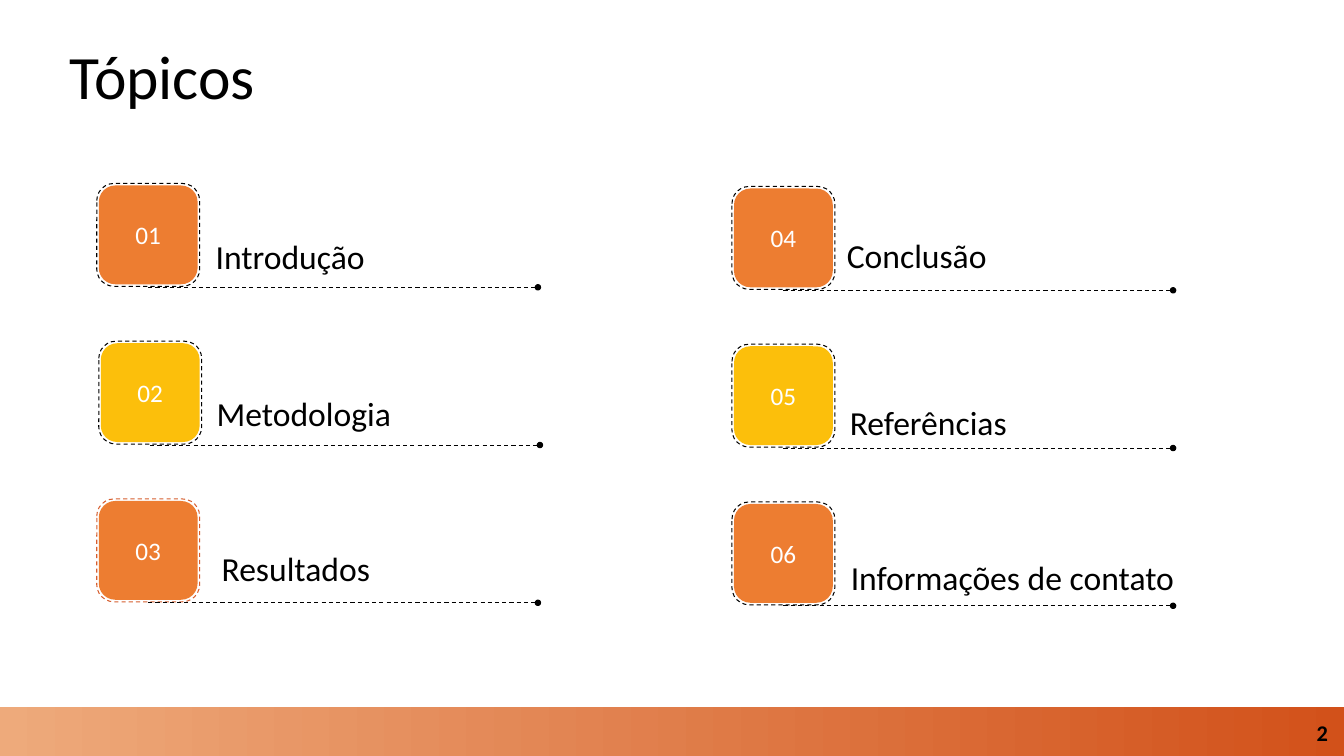
from lxml import etree
from pptx import Presentation
from pptx.dml.color import RGBColor
from pptx.enum.dml import MSO_LINE
from pptx.enum.shapes import MSO_CONNECTOR, MSO_SHAPE
from pptx.enum.text import MSO_ANCHOR, PP_ALIGN
from pptx.oxml.ns import qn
from pptx.util import Inches, Pt

RECT, ROUNDED, OVAL = MSO_SHAPE.RECTANGLE, MSO_SHAPE.ROUNDED_RECTANGLE, MSO_SHAPE.OVAL
STRAIGHT = MSO_CONNECTOR.STRAIGHT
DASH = MSO_LINE.DASH
TOP, MIDDLE = MSO_ANCHOR.TOP, MSO_ANCHOR.MIDDLE
LEFT, CENTER, RIGHT = PP_ALIGN.LEFT, PP_ALIGN.CENTER, PP_ALIGN.RIGHT

FONT = "Calibri"
BLACK, WHITE = "000000", "FFFFFF"
ORANGE, YELLOW, RUST = "ED7D31", "FCBF0B", "D75E2F"

# Topic grid, filled column by column
GRID_LEFT, GRID_TOP = 0.96, 1.82
COLUMN_PITCH, COLUMN_DROP = 6.3, 0.03
ROWS = 3
ROW_PITCH = 3.13 / 2
FRAME, TILE_INSET = 1.02, 0.02
RULE_START, RULE_END, RULE_DROP = 0.51, 4.4, 1.03
DOT = 0.05

# Label, its offset from the frame, its width, frame colour, frame shift
TOPICS = [
    ("Introdução", 1.08, 0.47, 2.33, BLACK, 0),
    ("Metodologia", 1.07, 0.46, 2.33, BLACK, 0.02),
    ("Resultados", 1.14, 0.44, 3.21, RUST, 0),
    ("Conclusão", 1.04, 0.43, 1.79, BLACK, 0),
    ("Referências", 1.07, 0.52, 3.45, BLACK, 0),
    ("Informações de contato", 1.08, 0.5, 3.53, BLACK, 0),
]


def rgb(value):
    return RGBColor.from_string(value)


def set_line(line, color, width, dash=None):
    line.color.rgb = rgb(color)
    line.width = Pt(width)
    if dash:
        line.dash_style = dash


def add_box(s, kind, left, top, width, height, fill=None):
    sp = s.shapes.add_shape(kind, Inches(left), Inches(top), Inches(width), Inches(height))
    sp.shadow.inherit = False
    sp.line.fill.background()
    if fill:
        sp.fill.solid()
        sp.fill.fore_color.rgb = rgb(fill)
    else:
        sp.fill.background()
    return sp


def write(sp, text, size, color=BLACK, align=LEFT, anchor=TOP, bold=False):
    tf = sp.text_frame
    tf.word_wrap = True
    tf.vertical_anchor = anchor
    p = tf.paragraphs[0]
    p.text = text
    p.alignment = align
    p.font.name = FONT
    p.font.size = Pt(size)
    p.font.bold = bold
    p.font.color.rgb = rgb(color)
    return p


def add_text(s, left, top, width, height, text, size, **style):
    sp = s.shapes.add_textbox(Inches(left), Inches(top), Inches(width), Inches(height))
    return write(sp, text, size, **style)


def add_footer(s, left, top, width, height):
    # Gradient band
    band = add_box(s, RECT, left, top, width, height)
    band.fill.gradient()
    band.fill.gradient_angle = 0
    for stop, color, position in zip(band.fill.gradient_stops, ("EEAA7B", "D2511A"), (0, 1)):
        stop.color.rgb = rgb(color)
        stop.position = position
    # Page number
    add_text(s, left + width - 3.06, top + 0.06, 3, 0.4, "2", 16,
             align=RIGHT, anchor=MIDDLE, bold=True)


def add_title(s, left, top, width, height):
    p = add_text(s, left, top, width, height, "Tópicos", 44, anchor=MIDDLE)
    p.line_spacing = 0.9


def add_topic(s, left, top, number, fill, label, label_dx, label_dy, label_width, frame_color):
    # Numbered tile in a dashed frame
    tile = FRAME - 2 * TILE_INSET
    add_box(s, ROUNDED, left + TILE_INSET, top + TILE_INSET, tile, tile, fill)
    frame = add_box(s, ROUNDED, left, top, FRAME, FRAME)
    set_line(frame.line, frame_color, 0.75, DASH)
    write(frame, f"{number:02d}", 18, color=WHITE, align=CENTER, anchor=MIDDLE)

    # Dashed rule ending in a dot
    y = top + RULE_DROP
    rule = s.shapes.add_connector(STRAIGHT, Inches(left + RULE_START), Inches(y),
                                  Inches(left + RULE_END), Inches(y))
    set_line(rule.line, BLACK, 0.75, DASH)
    etree.SubElement(rule._element.spPr, qn("a:effectLst"))
    dot = add_box(s, OVAL, left + RULE_END - DOT, y - DOT / 2, DOT, DOT, BLACK)
    set_line(dot.line, BLACK, 1)

    # Label
    add_text(s, left + label_dx, top + label_dy, label_width, 0.5, label, 24)


def add_topics(s, left, top):
    for i, (label, dx, dy, width, frame_color, shift) in enumerate(TOPICS):
        column, row = divmod(i, ROWS)
        add_topic(s, left + column * COLUMN_PITCH + shift,
                  top + column * COLUMN_DROP + row * ROW_PITCH,
                  i + 1, YELLOW if row == 1 else ORANGE,
                  label, dx, dy, width, frame_color)


def main():
    prs = Presentation()
    prs.slide_width, prs.slide_height = Inches(13.33), Inches(7.5)
    s = prs.slides.add_slide(prs.slide_layouts[6])
    add_footer(s, 0, 7.01, 13.33, 0.51)
    add_title(s, 0.59, 0.3, 5.01, 0.97)
    add_topics(s, GRID_LEFT, GRID_TOP)
    prs.save("out.pptx")


if __name__ == "__main__":
    main()
